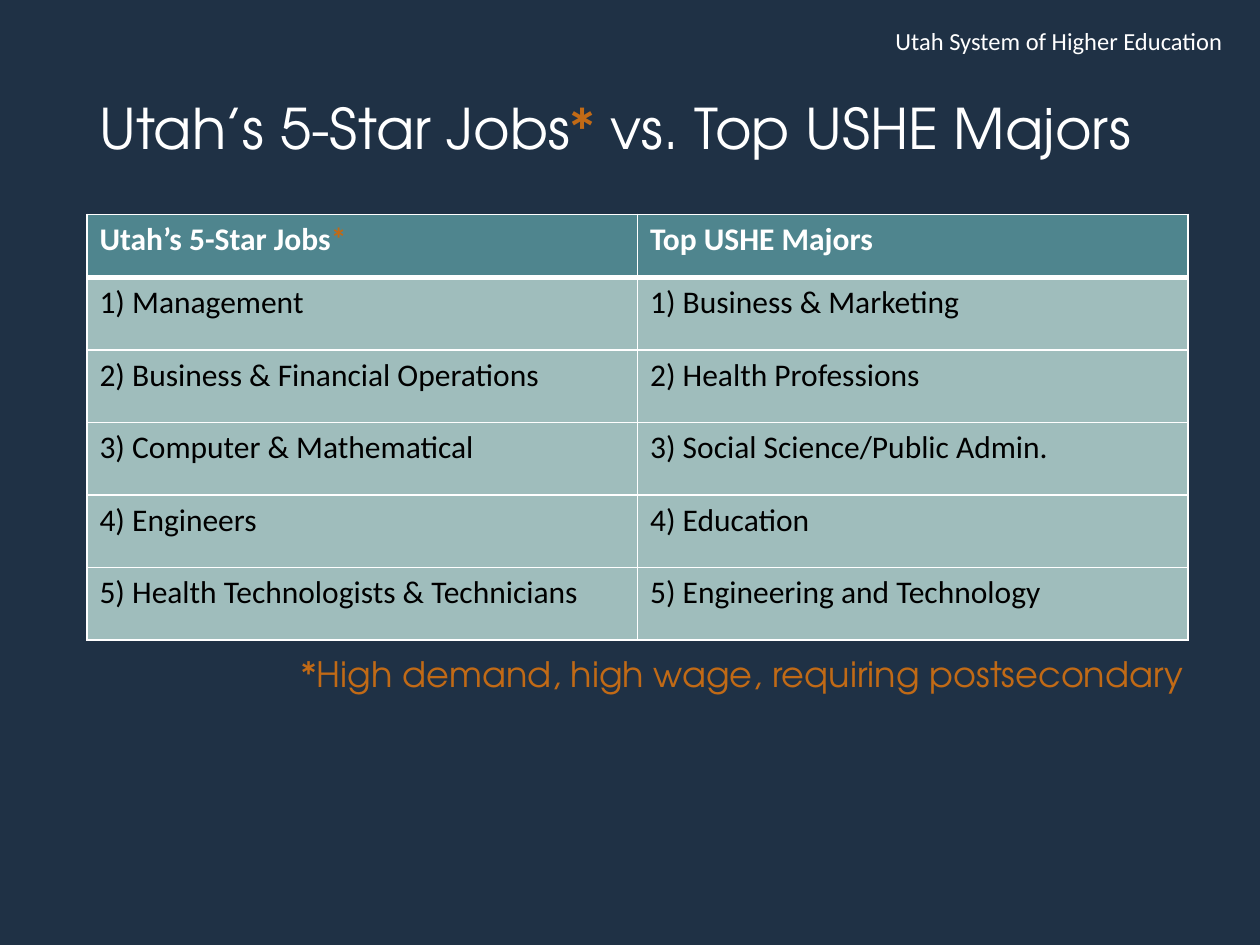
from dataclasses import dataclass
from lxml.etree import SubElement
from pptx import Presentation
from pptx.dml.color import RGBColor
from pptx.enum.text import MSO_ANCHOR, MSO_AUTO_SIZE, PP_ALIGN
from pptx.oxml import parse_xml
from pptx.oxml.ns import nsdecls, qn
from pptx.util import Inches, Pt


@dataclass(frozen=True)
class Theme:
    back: str = "1F3145"
    white: str = "FFFFFF"
    black: str = "000000"
    accent: str = "C16A16"
    head: str = "4F858E"
    cell: str = "9FBDBC"
    display: str = "TeX Gyre Adventor"
    text: str = "Calibri"
    title: int = 32
    note: int = 20
    table: int = 18
    label: int = 14


THEME = Theme()
WIDE, HIGH = Inches(10), Inches(7.5)
ROWS = [
    ("Management", "Business & Marketing"),
    ("Business & Financial Operations", "Health Professions"),
    ("Computer & Mathematical", "Social Science/Public Admin."),
    ("Engineers", "Education"),
    ("Health Technologists & Technicians", "Engineering and Technology"),
]


def share(left, top, width, height):
    """Turn percentages of the slide into a box of lengths."""
    return [round(part * side / 100) for part, side in
            zip((left, top, width, height), (WIDE, HIGH, WIDE, HIGH))]


def place(shape, box):
    for name, value in zip(("left", "top", "width", "height"), box):
        setattr(shape, name, value)


def style(item, **values):
    for name, value in values.items():
        setattr(item, name, value)


def write(frame, parts, face, size, bold=False, **layout):
    """Fill the first paragraph with (text, colour) parts."""
    line = frame.paragraphs[0]
    style(line, space_before=Pt(0), **layout)
    for text, color in parts:
        run = line.add_run()
        run.text = text
        style(run.font, name=face, size=Pt(size), bold=bold)
        run.font.color.rgb = RGBColor.from_string(color)


def add_label(slide, box):
    frame = slide.shapes.add_textbox(*box).text_frame
    frame.word_wrap = True
    write(frame, [("Utah System of Higher Education", THEME.white)],
          THEME.text, THEME.label, alignment=PP_ALIGN.RIGHT)


def add_title(slide, box):
    shape = slide.shapes.title
    place(shape, box)
    style(shape.text_frame, auto_size=MSO_AUTO_SIZE.NONE,
          vertical_anchor=MSO_ANCHOR.MIDDLE)
    parts = [("Utah’s 5-Star Jobs", THEME.white), ("*", THEME.accent),
             (" vs. Top USHE Majors", THEME.white)]
    write(shape.text_frame, parts, THEME.display, THEME.title,
          alignment=PP_ALIGN.LEFT, line_spacing=0.9)


def add_note(slide, box):
    shape = slide.placeholders[1]
    place(shape, box)
    frame = shape.text_frame
    frame.auto_size = MSO_AUTO_SIZE.NONE
    props = frame.paragraphs[0]._p.get_or_add_pPr()
    props.set("marL", "0")
    props.set("indent", "0")
    SubElement(props, qn("a:buNone"))
    write(frame, [("*High demand, high wage, requiring postsecondary", THEME.accent)],
          THEME.display, THEME.note, alignment=PP_ALIGN.RIGHT, line_spacing=0.9)


def edge(cell, **widths):
    """Draw white borders; keys are L, R, T and B, values are points."""
    props = cell._tc.get_or_add_tcPr()
    for spot, side in enumerate("LRTB"):
        props.insert(spot, parse_xml(
            f'<a:ln{side} {nsdecls("a")} w="{Pt(widths.get(side, 1))}"><a:solidFill>'
            f'<a:srgbClr val="{THEME.white}"/></a:solidFill></a:ln{side}>'))


def add_table(slide, box):
    heads = [[("Utah’s 5-Star Jobs", THEME.white), ("*", THEME.accent)],
             [("Top USHE Majors", THEME.white)]]
    lines = [heads] + [[[(f"{rank}) {name}", THEME.black)] for name in pair]
                       for rank, pair in enumerate(ROWS, 1)]
    table = slide.shapes.add_table(len(lines), len(heads), *box).table
    top = Inches(0.5)
    for row, line in enumerate(lines):
        first = row == 0
        table.rows[row].height = top if first else round((box[3] - top) / len(ROWS))
        for col, parts in enumerate(line):
            cell = table.cell(row, col)
            cell.fill.solid()
            cell.fill.fore_color.rgb = RGBColor.from_string(
                THEME.head if first else THEME.cell)
            edge(cell, **({"B": 3} if first else {"T": 3} if row == 1 else {}))
            write(cell.text_frame, parts, THEME.text, THEME.table, bold=first)


def main():
    deck = Presentation()
    style(deck, slide_width=WIDE, slide_height=HIGH)
    slide = deck.slides.add_slide(deck.slide_layouts[1])
    fill = slide.background.fill
    fill.solid()
    fill.fore_color.rgb = RGBColor.from_string(THEME.back)
    add_label(slide, share(40.5, 2.13, 57.5, 4.53))
    add_title(slide, share(6.9, 7.73, 86.2, 12.27))
    add_note(slide, share(8.8, 68.93, 86.2, 6.67))
    add_table(slide, share(6.9, 22.67, 87.4, 45.07))
    deck.save("out.pptx")


if __name__ == "__main__":
    main()
